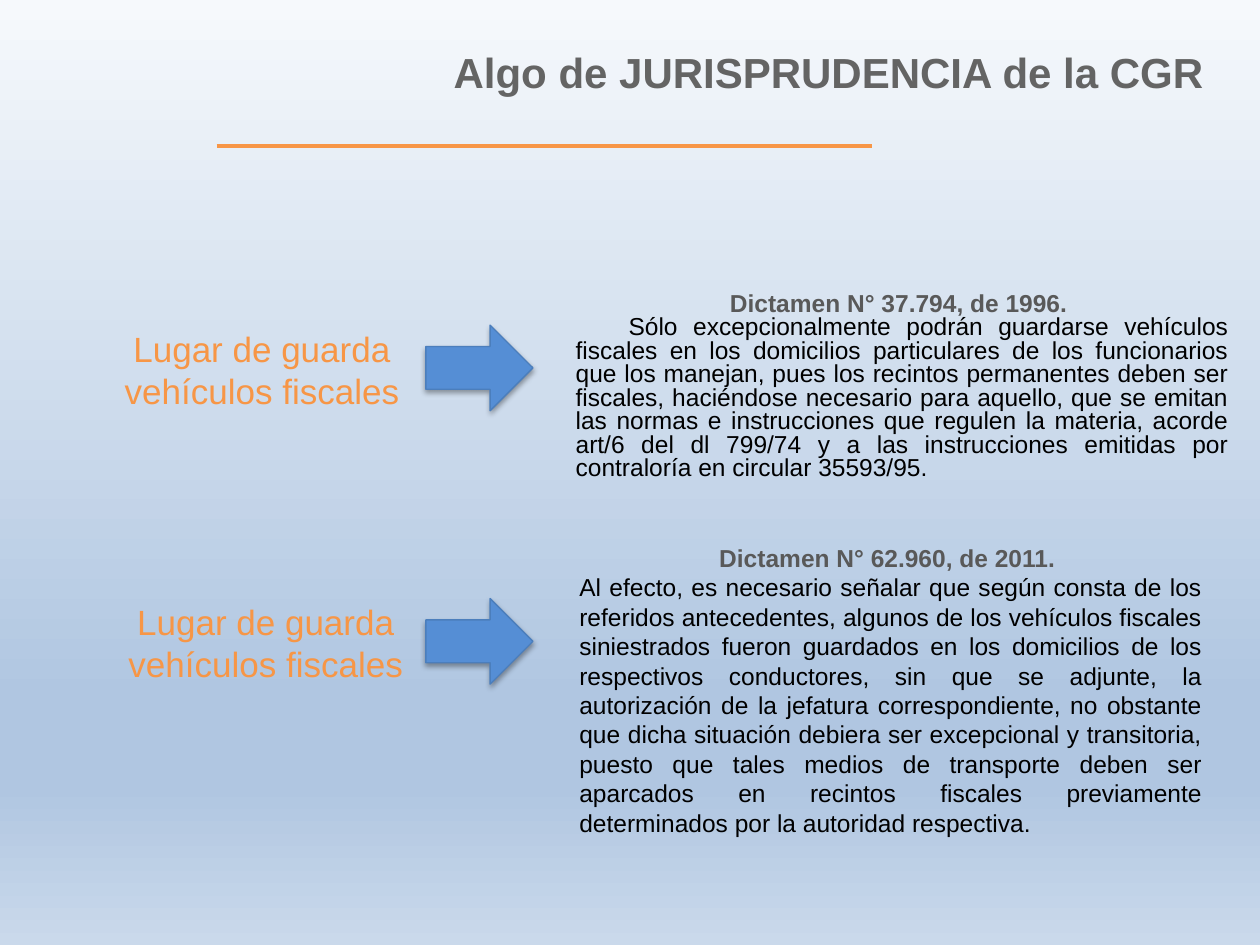
from dataclasses import dataclass

from lxml.etree import SubElement
from pptx import Presentation
from pptx.dml.color import RGBColor
from pptx.enum.shapes import MSO_CONNECTOR, MSO_SHAPE
from pptx.enum.text import MSO_ANCHOR, MSO_AUTO_SIZE, PP_ALIGN
from pptx.oxml.ns import qn
from pptx.util import Inches, Pt


@dataclass(frozen=True)
class Theme:
    font: str = "Arial"
    title: str = "646464"
    accent: str = "F79646"
    head: str = "595959"
    body: str = "000000"
    arrow: str = "558ED5"
    edge: str = "4B7EBC"
    shade: str = "000000"
    sky: tuple = ((0, "F6F9FC"), (74, "B0C6E1"), (83, "B0C6E1"), (100, "CAD9EB"))
    title_size: int = 24
    label_size: int = 20
    body_size: int = 14


def add(parent, tag, **attrs):
    return SubElement(parent, qn(tag), {k: str(v) for k, v in attrs.items()})


class Page:
    def __init__(self, deck, theme):
        self.theme = theme
        self.slide = deck.slides.add_slide(deck.slide_layouts[5])

    def backdrop(self):
        self.slide.background.fill.gradient()
        grad = self.slide.element.find(".//" + qn("a:gradFill"))
        for child in list(grad):
            grad.remove(child)
        stops = add(grad, "a:gsLst")
        for place, color in self.theme.sky:
            stop = add(stops, "a:gs", pos=place * 1000)
            add(stop, "a:srgbClr", val=color)
        add(grad, "a:lin", ang=90 * 60000, scaled=0)

    def style(self, para, text, size, color, bold=False, align=PP_ALIGN.LEFT):
        para.text = text
        para.alignment = align
        font = para.font
        font.name, font.size, font.bold = self.theme.font, Pt(size), bold
        font.color.rgb = RGBColor.from_string(color)

    def title(self, text, left, top, width, height):
        box = self.slide.shapes.title
        box.left, box.top = Inches(left), Inches(top)
        box.width, box.height = Inches(width), Inches(height)
        frame = box.text_frame
        frame.vertical_anchor = MSO_ANCHOR.TOP
        frame.auto_size = MSO_AUTO_SIZE.NONE
        self.style(frame.paragraphs[0], text, self.theme.title_size,
                   self.theme.title, bold=True)

    def frame(self, left, top, width, height):
        box = self.slide.shapes.add_textbox(
            Inches(left), Inches(top), Inches(width), Inches(height))
        box.text_frame.word_wrap = True
        return box.text_frame

    def label(self, text, left, top):
        frame = self.frame(left, top, 2.8, 0.77)
        self.style(frame.paragraphs[0], text, self.theme.label_size,
                   self.theme.accent, align=PP_ALIGN.CENTER)

    def ruling(self, head, body, place, margin=0, indent=0, spacing=1.0):
        """Centred bold heading over a justified paragraph."""
        frame = self.frame(*place)
        first, second = frame.paragraphs[0], frame.add_paragraph()
        size = self.theme.body_size
        self.style(first, head, size, self.theme.head, True, PP_ALIGN.CENTER)
        self.style(second, body, size, self.theme.body, align=PP_ALIGN.JUSTIFY)
        for para, shift in ((first, 0), (second, indent)):
            para.line_spacing = spacing
            props = para._p.get_or_add_pPr()
            props.set("marL", str(Inches(margin)))
            props.set("indent", str(Inches(shift)))

    def arrow(self, left, top):
        shape = self.slide.shapes.add_shape(
            MSO_SHAPE.RIGHT_ARROW, Inches(left), Inches(top),
            Inches(0.85), Inches(0.68))
        shape.fill.solid()
        shape.fill.fore_color.rgb = RGBColor.from_string(self.theme.arrow)
        shape.line.color.rgb = RGBColor.from_string(self.theme.edge)
        shape.line.width = Pt(0.75)
        effects = add(shape._element.spPr, "a:effectLst")
        shadow = add(effects, "a:outerShdw", blurRad=Pt(3.1), dist=Pt(1.8),
                     dir=90 * 60000, rotWithShape=0)
        color = add(shadow, "a:srgbClr", val=self.theme.shade)
        add(color, "a:alpha", val=35000)

    def rule(self, left, right, top):
        line = self.slide.shapes.add_connector(
            MSO_CONNECTOR.STRAIGHT, Inches(left), Inches(top),
            Inches(right), Inches(top))
        line.line.color.rgb = RGBColor.from_string(self.theme.accent)
        line.line.width = Pt(2.25)
        add(line._element.spPr, "a:effectLst")


TOPIC = "Lugar de guarda vehículos fiscales"
CUSTODY = (
    "Sólo excepcionalmente podrán guardarse vehículos fiscales en los "
    "domicilios particulares de los funcionarios que los manejan, pues los "
    "recintos permanentes deben ser fiscales, haciéndose necesario para "
    "aquello, que se emitan las normas e instrucciones que regulen la materia, "
    "acorde art/6 del dl 799/74 y a las instrucciones emitidas por contraloría "
    "en circular 35593/95.")
CRASHES = (
    "Al efecto, es necesario señalar que según consta de los referidos "
    "antecedentes, algunos de los vehículos fiscales siniestrados fueron "
    "guardados en los domicilios de los respectivos conductores, sin que se "
    "adjunte, la autorización de la jefatura correspondiente, no obstante que "
    "dicha situación debiera ser excepcional y transitoria, puesto que tales "
    "medios de transporte deben ser aparcados en recintos fiscales previamente "
    "determinados por la autoridad respectiva.")


def main():
    deck = Presentation()
    deck.slide_width, deck.slide_height = Inches(10), Inches(7.5)
    page = Page(deck, Theme())
    page.backdrop()
    page.title("Algo de JURISPRUDENCIA de la CGR", 3.5, 0.32, 6.3, 0.51)
    page.rule(1.72, 6.92, 1.16)
    for left, top in ((0.68, 2.55), (0.71, 4.72)):
        page.label(TOPIC, left, top)
        page.arrow(3.38, top + 0.03)
    page.ruling("Dictamen N° 37.794, de 1996. ", CUSTODY,
                (3.8, 2.28, 6.05, 1.61), margin=0.67, indent=0.42, spacing=0.8)
    page.ruling("Dictamen N° 62.960, de 2011. ", CRASHES,
                (4.5, 4.26, 5.14, 2.46))
    deck.save("out.pptx")


if __name__ == "__main__":
    main()
